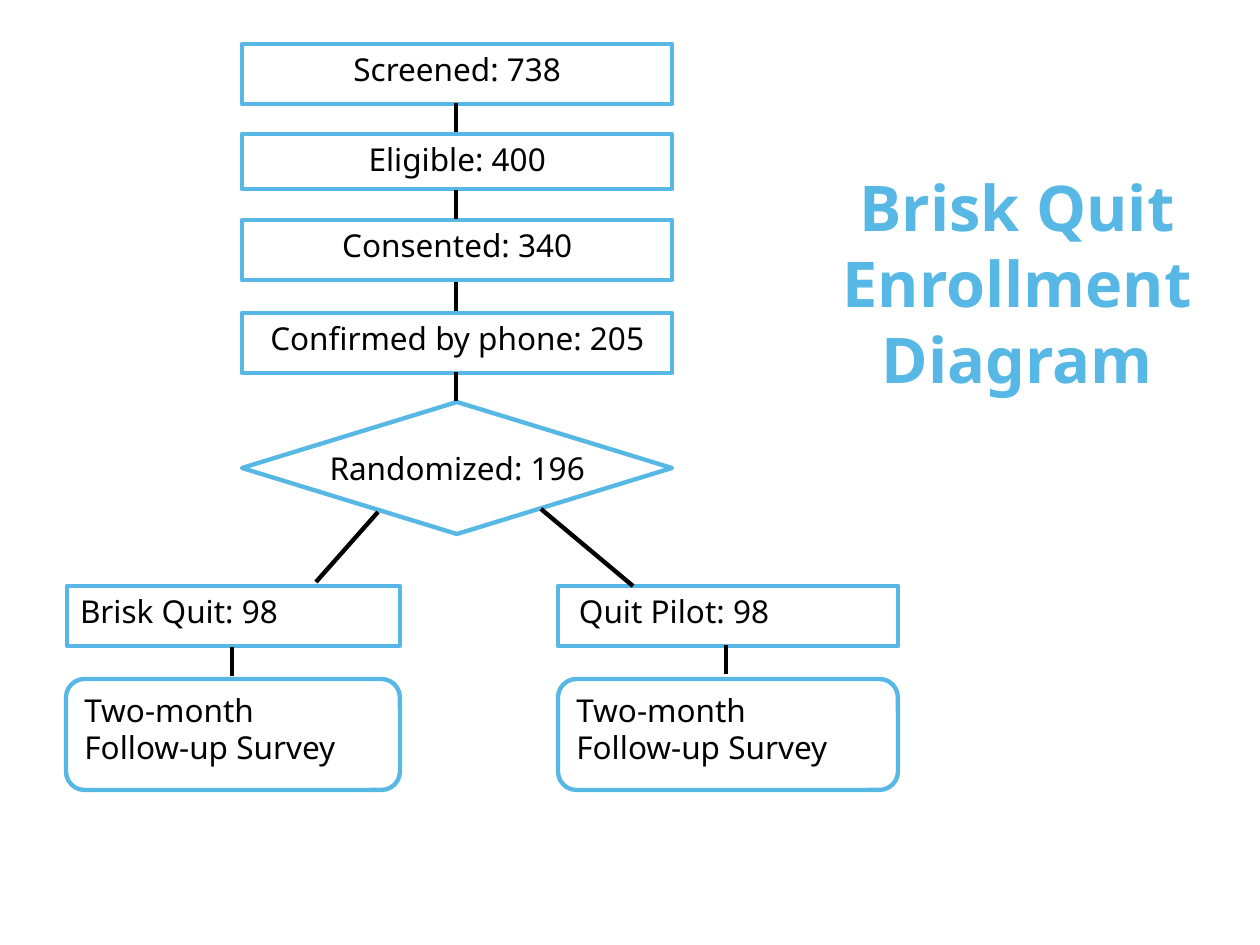
from dataclasses import dataclass

from lxml import etree
from pptx import Presentation
from pptx.dml.color import RGBColor
from pptx.enum.shapes import MSO_CONNECTOR, MSO_SHAPE
from pptx.enum.text import MSO_ANCHOR, PP_ALIGN
from pptx.oxml.ns import qn
from pptx.util import Pt

RECTANGLE, ROUNDED = MSO_SHAPE.RECTANGLE, MSO_SHAPE.ROUNDED_RECTANGLE
DECISION = MSO_SHAPE.FLOWCHART_DECISION
STRAIGHT = MSO_CONNECTOR.STRAIGHT
TOP, MIDDLE, BOTTOM = MSO_ANCHOR.TOP, MSO_ANCHOR.MIDDLE, MSO_ANCHOR.BOTTOM
LEFT, CENTER = PP_ALIGN.LEFT, PP_ALIGN.CENTER
EMU_PER_INCH, PX_PER_INCH = 914400, 126
FONT, BLUE, BLACK = "Noto Sans", "57B8E5", "000000"
LINE_WIDTH = Pt(2.5)
STEP_LEFT, STEP_WIDTH, STEP_AXIS = 242, 430, 456


@dataclass
class Node:
    lines: list[str]
    left: int
    top: int
    width: int
    height: int
    kind: int = RECTANGLE
    align: int = LEFT
    anchor: int = TOP
    inset: int = 13


@dataclass
class Link:
    start_x: int
    start_y: int
    end_x: int
    end_y: int


def step(text: str, top: int, height: int = 60, kind: int = RECTANGLE,
         anchor: int = TOP) -> Node:
    return Node([text], STEP_LEFT, top, STEP_WIDTH, height, kind, CENTER, anchor)


def survey(left: int, width: int) -> Node:
    return Node(["Two-month", "Follow-up Survey"], left, 679, width, 111, ROUNDED)


NODES = [
    step("Screened: 738", 44),
    step("Eligible: 400", 134, 55),
    step("Consented: 340", 220),
    step("Confirmed by phone: 205", 313),
    step("Randomized: 196", 402, 132, DECISION, MIDDLE),
    Node(["Brisk Quit: 98"], 67, 586, 333, 60),
    Node(["Quit Pilot: 98"], 558, 586, 340, 60, inset=21),
    survey(66, 334),
    survey(558, 340),
]
LINKS = [Link(STEP_AXIS, top, STEP_AXIS, top + 29) for top in (103, 190, 282, 372)] + [
    Link(378, 512, 316, 582),
    Link(633, 586, 541, 509),
    Link(232, 647, 232, 676),
    Link(726, 645, 726, 674),
]


def px(length: int) -> int:
    return round(length * EMU_PER_INCH / PX_PER_INCH)


def color(value: str) -> RGBColor:
    return RGBColor.from_string(value)


def write(frame, lines: list[str], align: int, size: int, ink: str,
          bold: bool = False) -> None:
    frame.text = "\n".join(lines)
    for para in frame.paragraphs:
        para.alignment = align
        para.font.name = FONT
        para.font.size = Pt(size)
        para.font.bold = bold
        para.font.color.rgb = color(ink)


def draw_node(page, node: Node) -> None:
    shape = page.shapes.add_shape(node.kind, px(node.left), px(node.top),
                                  px(node.width), px(node.height))
    shape.shadow.inherit = False
    shape.fill.background()
    shape.line.color.rgb = color(BLUE)
    shape.line.width = LINE_WIDTH
    frame = shape.text_frame
    frame.word_wrap = False
    frame.vertical_anchor = node.anchor
    frame.margin_left = px(node.inset)
    write(frame, node.lines, node.align, 18, BLACK)


def draw_link(page, link: Link) -> None:
    connector = page.shapes.add_connector(STRAIGHT, px(link.start_x), px(link.start_y),
                                          px(link.end_x), px(link.end_y))
    connector.line.color.rgb = color(BLACK)
    connector.line.width = LINE_WIDTH
    etree.SubElement(connector._element.spPr, qn("a:effectLst"))


def draw_title(page) -> None:
    box = page.shapes.add_textbox(px(806), px(160), px(422), px(242))
    box.text_frame.word_wrap = True
    box.text_frame.vertical_anchor = BOTTOM
    write(box.text_frame, ["Brisk Quit", "Enrollment", "Diagram"], CENTER, 36, BLUE, True)


def main() -> None:
    """Build the enrollment flow diagram slide."""
    deck = Presentation()
    deck.slide_width, deck.slide_height = px(1260), px(945)
    page = deck.slides.add_slide(deck.slide_layouts[6])
    draw_title(page)
    for node in NODES:
        draw_node(page, node)
    for link in LINKS:
        draw_link(page, link)
    deck.save("out.pptx")


if __name__ == "__main__":
    main()
